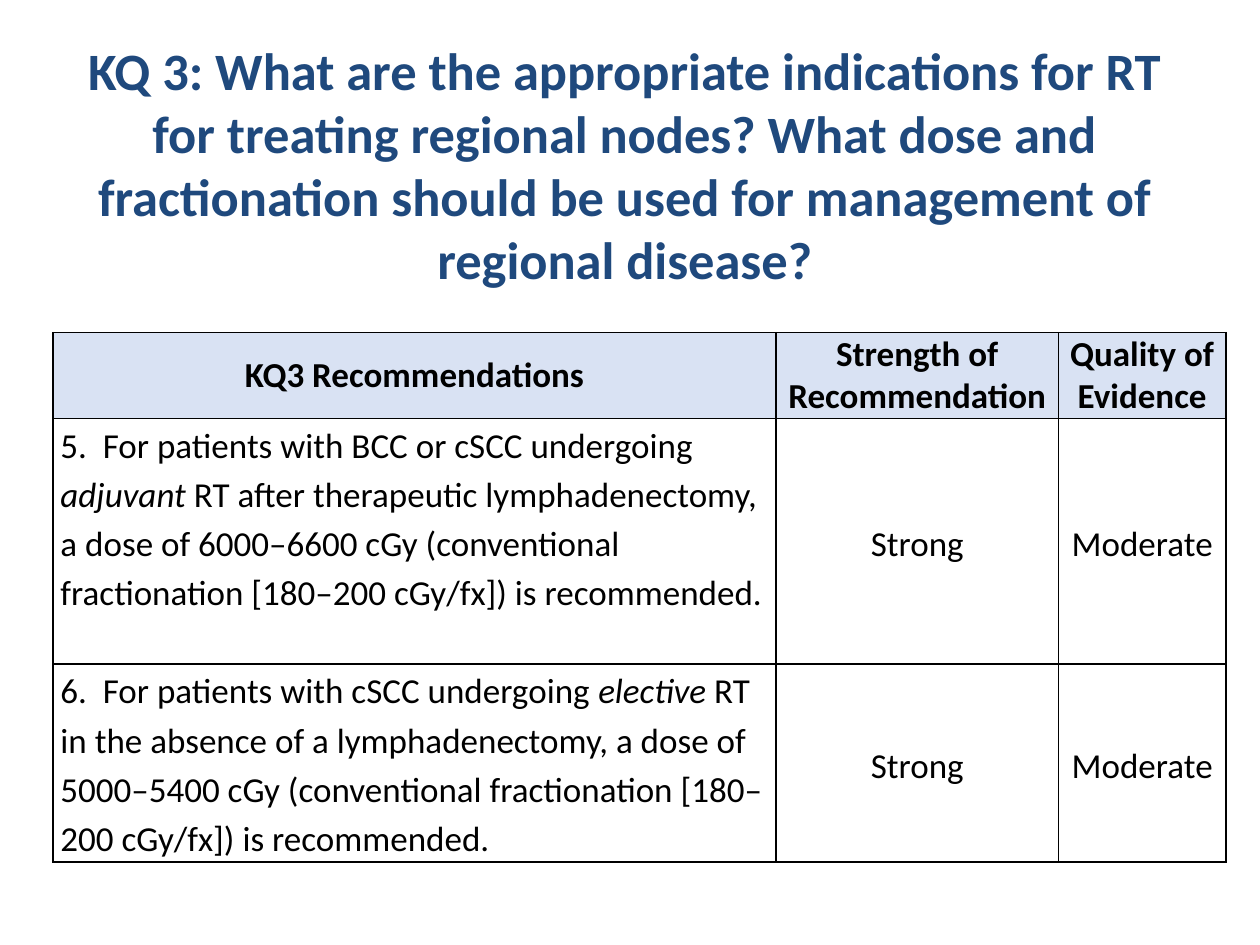
from lxml import etree
from pptx import Presentation
from pptx.dml.color import RGBColor
from pptx.enum.text import MSO_ANCHOR, PP_ALIGN
from pptx.oxml.ns import qn
from pptx.util import Inches, Pt

LEFT, MID = PP_ALIGN.LEFT, PP_ALIGN.CENTER
TOP, CORE = MSO_ANCHOR.TOP, MSO_ANCHOR.MIDDLE
TITLE = ("KQ 3: What are the appropriate indications for RT for treating regional "
         "nodes? What dose and fractionation should be used for management of "
         "regional disease?")
HEADS = ["KQ3 Recommendations", "Strength of Recommendation", "Quality of Evidence"]
ADVICE = [
    ("5.  For patients with BCC or cSCC undergoing ", "adjuvant",
     " RT after therapeutic lymphadenectomy, a dose of 6000–6600 cGy "
     "(conventional fractionation [180–200 cGy/fx]) is recommended."),
    ("6.  For patients with cSCC undergoing ", "elective",
     " RT in the absence of a lymphadenectomy, a dose of 5000–5400 cGy "
     "(conventional fractionation [180–200 cGy/fx]) is recommended."),
]
GRADES = ["Strong", "Moderate"]
WIDTHS = [5.74, 2.24, 1.33]
HEIGHTS = [0.68, 1.95, 1.57]


def color(code):
    return RGBColor.from_string(code)


def apply(target, values):
    for name, value in values.items():
        setattr(target, name, value)


class Deck:
    font = "Calibri"
    ink = "000000"
    blue = "1F497D"
    tint = "D9E2F3"

    def __init__(self):
        self.show = Presentation()
        apply(self.show, {"slide_width": Inches(10), "slide_height": Inches(7.5)})
        self.slide = self.show.slides.add_slide(self.show.slide_layouts[6])

    def text(self, para, parts, size, code, bold=False, align=MID, lead=None):
        apply(para, {"alignment": align, "line_spacing": lead})
        for index, part in enumerate(parts):
            run = para.add_run()
            run.text = part
            apply(run.font, {"name": self.font, "size": Pt(size),
                             "bold": bold, "italic": index % 2 == 1})
            run.font.color.rgb = color(code)

    def title(self, text, left, top, width, height):
        box = self.slide.shapes.add_textbox(
            Inches(left), Inches(top), Inches(width), Inches(height))
        frame = box.text_frame
        apply(frame, {"word_wrap": True, "vertical_anchor": TOP})
        self.text(frame.paragraphs[0], [text], 30, self.blue, bold=True)

    def border(self, cell):
        props = cell._tc.get_or_add_tcPr()
        for index, side in enumerate(("lnL", "lnR", "lnT", "lnB")):
            line = etree.Element(qn("a:" + side), w=str(Pt(1)))
            fill = etree.SubElement(line, qn("a:solidFill"))
            etree.SubElement(fill, qn("a:srgbClr"), val=self.ink)
            props.insert(index, line)

    def cell(self, cell, parts, head, align):
        side = Inches(0.05 if head else 0.06)
        apply(cell, {"margin_left": side, "margin_right": side,
                     "margin_top": 0, "margin_bottom": 0,
                     "vertical_anchor": CORE if align == MID else TOP})
        if head:
            cell.fill.solid()
            cell.fill.fore_color.rgb = color(self.tint)
        else:
            cell.fill.background()
        self.border(cell)
        self.text(cell.text_frame.paragraphs[0], parts, 20, self.ink,
                  bold=head, align=align, lead=None if head else 1.15)

    def table(self, rows, left, top, widths, heights):
        grid = self.slide.shapes.add_table(
            len(rows), len(widths), Inches(left), Inches(top),
            Inches(sum(widths)), Inches(sum(heights))).table
        apply(grid, {"first_row": False, "horz_banding": False})
        for column, width in zip(grid.columns, widths):
            column.width = Inches(width)
        for row, height in zip(grid.rows, heights):
            row.height = Inches(height)
        for y, row in enumerate(rows):
            for x, parts in enumerate(row):
                align = LEFT if y and not x else MID
                self.cell(grid.cell(y, x), parts, y == 0, align)


def main():
    deck = Deck()
    deck.title(TITLE, 0.42, 0.25, 9.08, 1.09)
    rows = [[[head] for head in HEADS]]
    rows += [[parts] + [[grade] for grade in GRADES] for parts in ADVICE]
    deck.table(rows, 0.42, 2.64, WIDTHS, HEIGHTS)
    deck.show.save("out.pptx")


if __name__ == "__main__":
    main()
